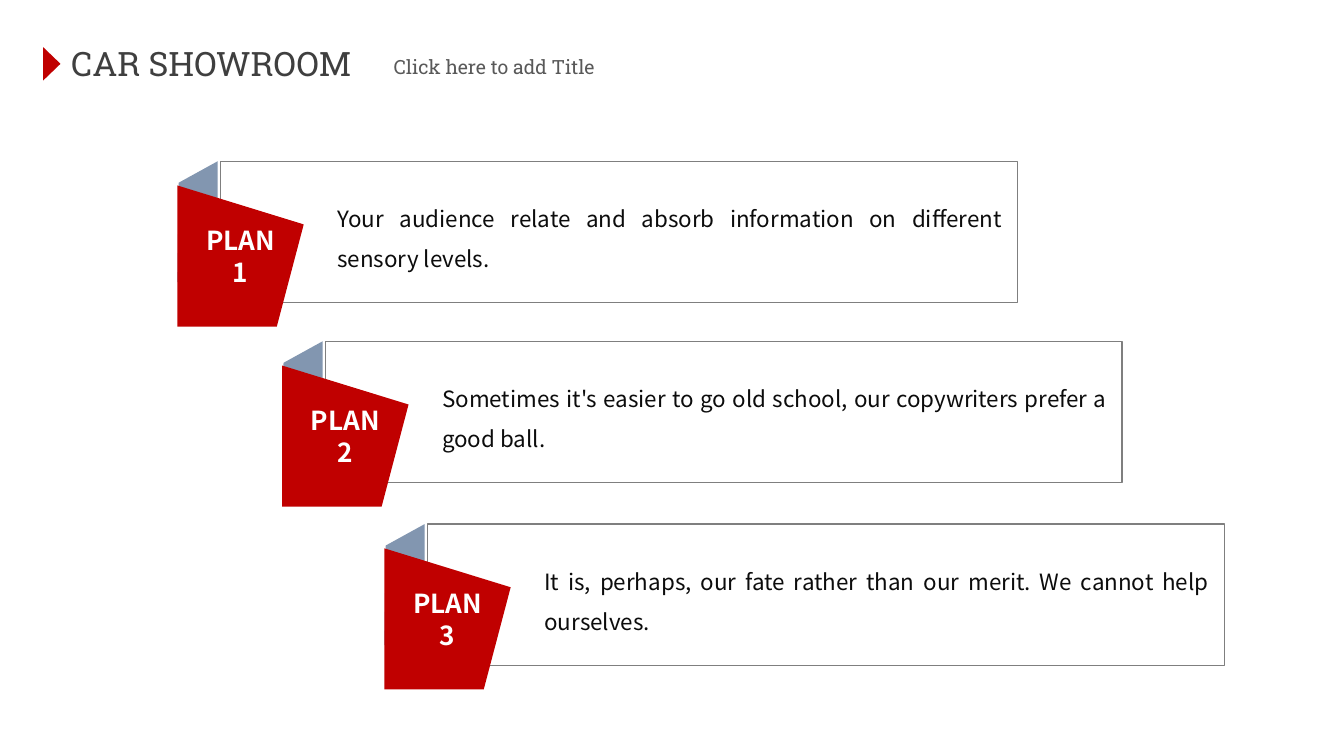
from collections import namedtuple
from dataclasses import dataclass

from pptx import Presentation
from pptx.dml.color import RGBColor
from pptx.enum.shapes import MSO_SHAPE
from pptx.enum.text import MSO_ANCHOR, MSO_AUTO_SIZE, PP_ALIGN
from pptx.util import Inches, Pt

Box = namedtuple("Box", "left top width height")


@dataclass(frozen=True)
class Theme:
    red: str = "C00000"
    fold: str = "8296B0"
    white: str = "FFFFFF"
    border: str = "7F7F7F"
    title: str = "3F3F3F"
    subtitle: str = "595959"
    body: str = "0C0C0C"
    heading_font: str = "Roboto Slab"
    body_font: str = "Noto Sans CJK SC"
    title_size: float = 18
    subtitle_size: float = 10.5
    label_size: float = 14
    body_size: float = 12


THEME = Theme()


def paint(shape, fill, line=None):
    shape.shadow.inherit = False
    shape.fill.solid()
    shape.fill.fore_color.rgb = RGBColor.from_string(fill)
    if line:
        shape.line.color.rgb = RGBColor.from_string(line)
        shape.line.width = Pt(0.75)
    else:
        shape.line.fill.background()


def write(shape, text, font, size, color, align=PP_ALIGN.LEFT, anchor=MSO_ANCHOR.TOP,
          insets=(0.1, 0.05, 0.1, 0.05), bold=False, spacing=1.0, wrap=True):
    frame = shape.text_frame
    frame.text = text
    frame.word_wrap = wrap
    frame.auto_size = MSO_AUTO_SIZE.NONE
    frame.vertical_anchor = anchor
    (frame.margin_left, frame.margin_top,
     frame.margin_right, frame.margin_bottom) = map(Inches, insets)
    for para in frame.paragraphs:
        para.alignment = align
        para.line_spacing = spacing
        for span in para.runs:
            span.font.name = font
            span.font.size = Pt(size)
            span.font.bold = bold
            span.font.color.rgb = RGBColor.from_string(color)


def add_polygon(page, box, points, fill):
    """Draw a closed outline from points relative to the box."""
    corners = [(Inches(box.left + x), Inches(box.top + y)) for x, y in points]
    builder = page.shapes.build_freeform(*corners[0])
    builder.add_line_segments(corners[1:], close=True)
    shape = builder.convert_to_shape()
    paint(shape, fill)
    return shape


def add_header(page, box):
    # Title
    title = page.shapes.title
    title.left, title.top = Inches(box.left + 0.1), Inches(box.top)
    title.width, title.height = Inches(2.3), Inches(box.height)
    write(title, "CAR SHOWROOM", THEME.heading_font, THEME.title_size, THEME.title, wrap=False)

    # Marker pointing right
    marker = page.shapes.add_shape(
        MSO_SHAPE.ISOSCELES_TRIANGLE, Inches(box.left - 0.07), Inches(box.top + 0.14),
        Inches(0.25), Inches(0.13))
    marker.rotation = 90
    paint(marker, THEME.red)

    # Subtitle
    subtitle = page.shapes.add_textbox(
        Inches(box.left + 2.43), Inches(box.top + 0.09), Inches(1.83), Inches(0.28))
    write(subtitle, "Click here to add Title", THEME.heading_font, THEME.subtitle_size,
          THEME.subtitle, insets=(0.17, 0.05, 0.1, 0.05), wrap=False)


def add_plan(page, box, number, text):
    # Folded corner behind the tag
    add_polygon(page, box, [(0.3, 0), (0.3, 0.9), (0, 0.9), (0.01, 0.16)], THEME.fold)

    # Text panel
    panel = page.shapes.add_shape(
        MSO_SHAPE.RECTANGLE, Inches(box.left + 0.32), Inches(box.top),
        Inches(box.width - 0.32), Inches(1.05))
    paint(panel, THEME.white, THEME.border)
    write(panel, text, THEME.body_font, THEME.body_size, THEME.body, PP_ALIGN.JUSTIFY,
          MSO_ANCHOR.MIDDLE, (0.87, 0.06, 0.11, 0.06), spacing=1.5)

    # Red tag
    tag = add_polygon(page, box, [(0, 0.18), (0.94, 0.47), (0.74, 1.23), (0, box.height)],
                      THEME.red)
    write(tag, f"PLAN\n{number}", THEME.body_font, THEME.label_size, THEME.white,
          PP_ALIGN.CENTER, MSO_ANCHOR.MIDDLE, (0, 0, 0, 0), bold=True)


def main():
    deck = Presentation()
    deck.slide_width = Inches(10)
    deck.slide_height = deck.slide_width * 9 // 16
    page = deck.slides.add_slide(deck.slide_layouts.get_by_name("Title Only"))

    add_header(page, Box(0.33, 0.27, 4.26, 0.4))
    plans = [
        (1.32, 1.2, "Your audience relate and absorb information on different sensory levels."),
        (2.1, 2.54, "Sometimes it's easier to go old school, our copywriters prefer a good ball."),
        (2.86, 3.9, "It is, perhaps, our fate rather than our merit. We cannot help ourselves."),
    ]
    for number, (left, top, text) in enumerate(plans, start=1):
        add_plan(page, Box(left, top, 6.25, 1.23), number, text)

    deck.save("out.pptx")


if __name__ == "__main__":
    main()
